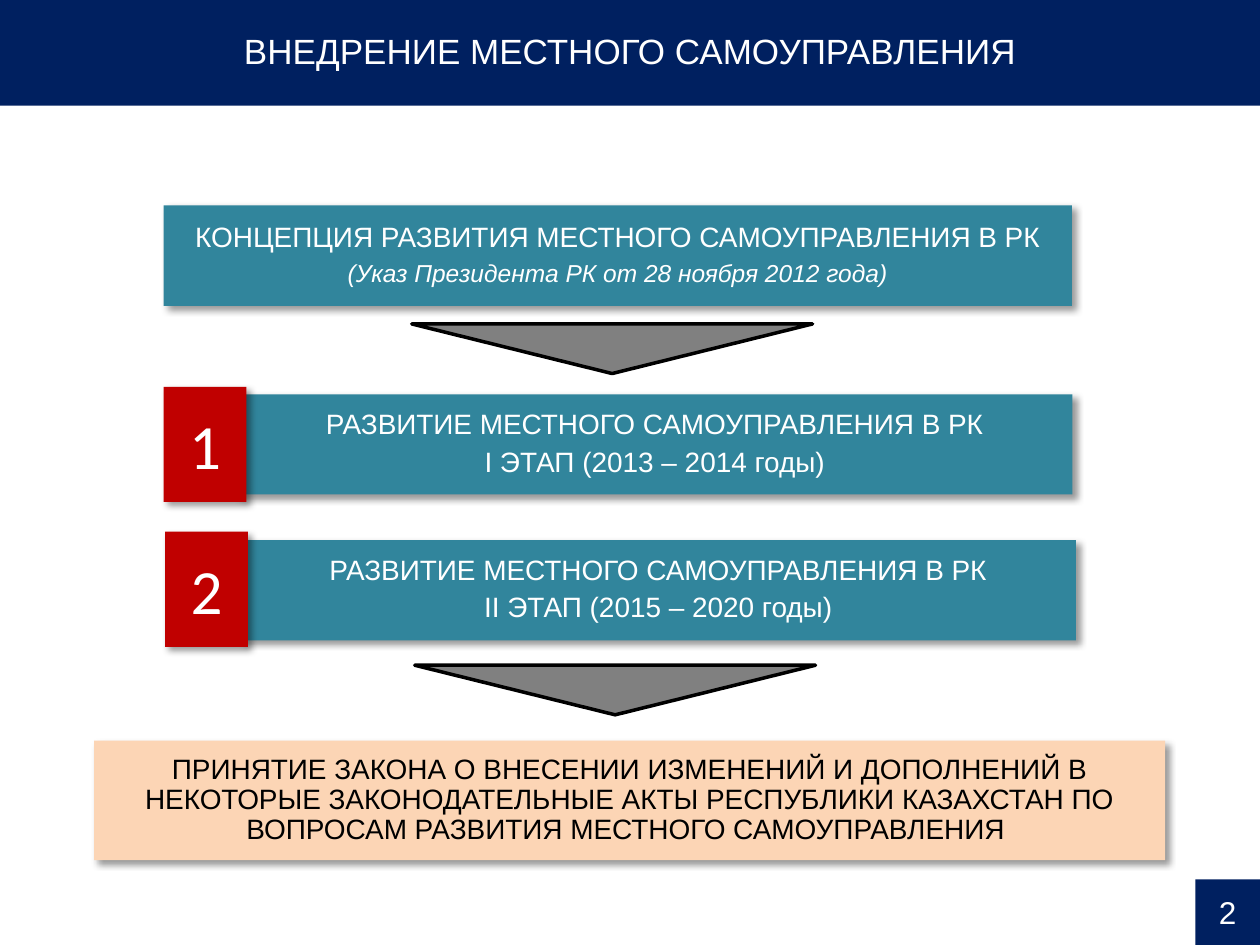
from lxml import etree
from pptx import Presentation
from pptx.dml.color import RGBColor
from pptx.enum.shapes import MSO_SHAPE
from pptx.enum.text import MSO_ANCHOR, PP_ALIGN
from pptx.oxml import parse_xml
from pptx.util import Cm, Pt

RECTANGLE = MSO_SHAPE.RECTANGLE
TRIANGLE = MSO_SHAPE.ISOSCELES_TRIANGLE
MIDDLE = MSO_ANCHOR.MIDDLE
CENTER = PP_ALIGN.CENTER

NAVY = RGBColor(0x00, 0x20, 0x60)
TEAL = RGBColor(0x31, 0x85, 0x9C)
PEACH = RGBColor(0xFC, 0xD5, 0xB5)
RED = RGBColor(0xC0, 0x00, 0x00)
GRAY = RGBColor(0x80, 0x80, 0x80)
BLACK = RGBColor(0x00, 0x00, 0x00)
WHITE = RGBColor(0xFF, 0xFF, 0xFF)

SHADOW = (
    '<a:effectLst xmlns:a="http://schemas.openxmlformats.org/drawingml/2006/main">'
    '<a:outerShdw blurRad="50800" dist="38100" dir="2700000" algn="tl" rotWithShape="0">'
    '<a:srgbClr val="000000"><a:alpha val="40000"/></a:srgbClr>'
    "</a:outerShdw></a:effectLst>"
)
BODY_PARAGRAPH = {"alignment": CENTER, "line_spacing": 0.9, "space_before": Pt(4)}
NUMBER_PARAGRAPH = {"alignment": CENTER}

presentation = Presentation()
presentation.slide_width = Cm(25.4)
presentation.slide_height = Cm(19.05)
slide = presentation.slides.add_slide(presentation.slide_layouts[6])


def add_filled_shape(kind, position, fill):
    shape = slide.shapes.add_shape(kind, *[Cm(length) for length in position])
    shape.shadow.inherit = False
    shape.fill.solid()
    shape.fill.fore_color.rgb = fill
    shape.line.fill.background()
    return shape


def add_text_box(position, fill, lines, paragraph_format, font_format, color, shadow):
    shape = add_filled_shape(RECTANGLE, position, fill)
    if shadow:
        properties = shape.fill._xPr
        empty_effects = properties.find("{*}effectLst")
        properties.replace(empty_effects, parse_xml(SHADOW))
    frame = shape.text_frame
    frame.word_wrap = True
    frame.vertical_anchor = MIDDLE
    for index, (text, line_format) in enumerate(lines):
        paragraph = frame.add_paragraph() if index else frame.paragraphs[0]
        for name, value in paragraph_format.items():
            setattr(paragraph, name, value)
        run = paragraph.add_run()
        run.text = text
        run.font.color.rgb = color
        for name, value in {**font_format, **line_format}.items():
            setattr(run.font, name, value)


# Concept, the two stages and the resulting law
body_font = {"name": "Arial", "size": Pt(16)}
stage_title = ("РАЗВИТИЕ МЕСТНОГО САМОУПРАВЛЕНИЯ В РК", {})
boxes = [
    ((3.3, 4.14, 18.31, 2.03), TEAL, WHITE, [
        ("КОНЦЕПЦИЯ РАЗВИТИЯ МЕСТНОГО САМОУПРАВЛЕНИЯ В РК", {}),
        ("(Указ Президента РК от 28 ноября 2012 года)", {"size": Pt(14), "italic": True}),
    ]),
    ((4.78, 7.95, 16.84, 2.02), TEAL, WHITE, [stage_title, ("I ЭТАП (2013 – 2014 годы)", {})]),
    ((4.85, 10.89, 16.84, 2.02), TEAL, WHITE, [stage_title, ("II ЭТАП (2015 – 2020 годы)", {})]),
    ((1.9, 14.93, 21.59, 2.41), PEACH, BLACK, [
        ("ПРИНЯТИЕ ЗАКОНА О ВНЕСЕНИИ ИЗМЕНЕНИЙ И ДОПОЛНЕНИЙ В НЕКОТОРЫЕ "
         "ЗАКОНОДАТЕЛЬНЫЕ АКТЫ РЕСПУБЛИКИ КАЗАХСТАН ПО ВОПРОСАМ РАЗВИТИЯ "
         "МЕСТНОГО САМОУПРАВЛЕНИЯ ", {}),
    ]),
]
for position, fill, color, lines in boxes:
    add_text_box(position, fill, lines, BODY_PARAGRAPH, body_font, color, True)

# Stage numbers
number_font = {"name": "Calibri", "size": Pt(36)}
for number, left, top in (("1", 3.3, 7.8), ("2", 3.33, 10.72)):
    add_text_box((left, top, 1.67, 2.32), RED, [(number, {})],
                 NUMBER_PARAGRAPH, number_font, WHITE, True)

# Title band
add_text_box((0, 0, 25.4, 2.13), NAVY, [("ВНЕДРЕНИЕ МЕСТНОГО САМОУПРАВЛЕНИЯ", {})],
             BODY_PARAGRAPH, {"name": "Arial", "size": Pt(20)}, WHITE, False)

# Downward triangles
for left, top in ((8.36, 13.41), (8.3, 6.53)):
    triangle = add_filled_shape(TRIANGLE, (left, top, 8.08, 1), GRAY)
    triangle.rotation = 180
    triangle.line.color.rgb = BLACK
    triangle.line.width = Pt(2)

# Page number
add_text_box((24.1, 17.73, 1.3, 1.32), NAVY, [("2", {})],
             NUMBER_PARAGRAPH, {"name": "Arial", "size": Pt(18)}, WHITE, False)

presentation.save("out.pptx")
